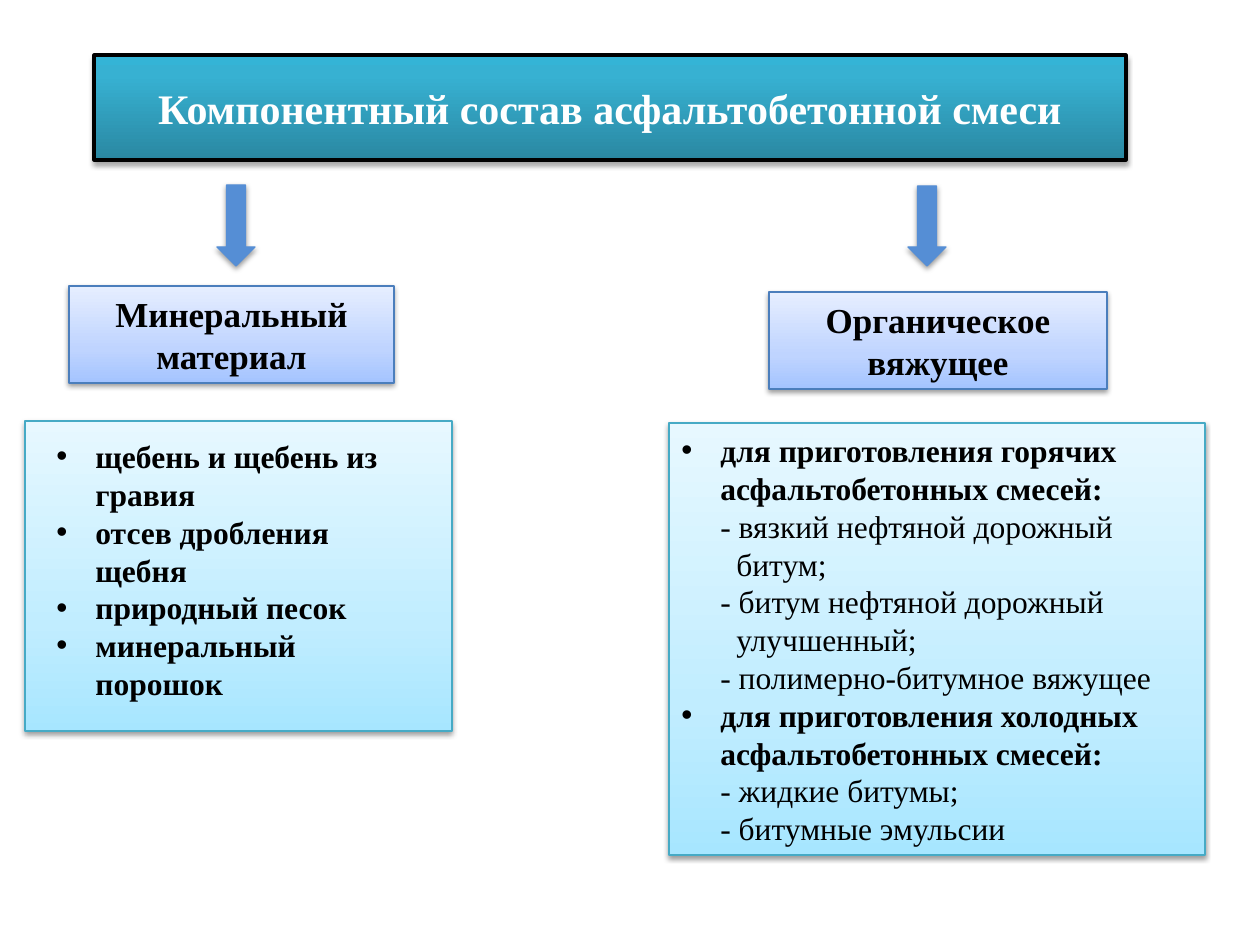
from dataclasses import dataclass

from lxml.etree import SubElement
from pptx import Presentation
from pptx.dml.color import RGBColor
from pptx.enum.shapes import MSO_SHAPE
from pptx.enum.text import MSO_ANCHOR, MSO_AUTO_SIZE, PP_ALIGN
from pptx.oxml.ns import qn
from pptx.util import Emu, Pt

INKS = {
    "black": "000000", "white": "FFFFFF", "arrow": "558ED5",
    "teal": "46AAC5", "blue": "4B7EBC",
}
FADES = {
    "back": ((0, "8488C4"), (53, "D4DEFF"), (83, "D4DEFF"), (100, "96AB94")),
    "title": ((0, "2A88A2"), (80, "37B1D2"), (100, "34B4D6")),
    "head": ((0, "A4C4FF"), (35, "BFD4FF"), (100, "E6EEFF")),
    "panel": ((0, "A7E6FF"), (35, "C1EDFF"), (100, "E7F8FF")),
}
FONT = "Times New Roman"
STEP = 39
HANG = 55


@dataclass
class Area:
    left: int
    top: int
    width: int
    height: int


@dataclass
class Shade:
    alpha: int = 38
    drop: float = 1.6


@dataclass
class Branch:
    arrow: Area
    head: Area
    panel: Area
    name: str


@dataclass
class Item:
    text: str
    bullet: bool = False
    left: int = STEP


TITLE = Area(94, 76, 1032, 63)
BACK = Area(94, 76, 1032, 66)
NOTE = Area(44, 431, 387, 280)
LEFT = Branch(Area(217, 185, 38, 81), Area(69, 286, 325, 97),
              Area(25, 421, 427, 310), "Минеральный материал")
RIGHT = Branch(Area(908, 186, 38, 80), Area(769, 292, 338, 97),
               Area(669, 423, 536, 432), "Органическое вяжущее")
STONES = [Item(text, True) for text in (
    "щебень и щебень из гравия", "отсев дробления щебня",
    "природный песок", "минеральный порошок")]
BINDERS = [
    Item("для приготовления горячих асфальтобетонных смесей:", True),
    Item("- вязкий нефтяной дорожный"),
    Item("битум;", left=HANG),
    Item("- битум нефтяной дорожный"),
    Item("улучшенный;", left=HANG),
    Item("- полимерно-битумное вяжущее"),
    Item("для приготовления холодных асфальтобетонных смесей:", True),
    Item("- жидкие битумы;"),
    Item("- битумные эмульсии"),
]


def px(count: int) -> Emu:
    return Emu(round(count * 914400 / 126))


def ink(name: str) -> RGBColor:
    return RGBColor.from_string(INKS[name])


def place(shape, area: Area) -> None:
    shape.left, shape.top = px(area.left), px(area.top)
    shape.width, shape.height = px(area.width), px(area.height)


def paint(shape, fill: str, line: str, width: float = 0.75,
          shade: Shade | None = None) -> None:
    props = shape._element.spPr
    if fill in FADES:
        shape.fill.gradient()
        shape.fill.gradient_angle = 90
        stops = props.find(qn("a:gradFill")).find(qn("a:gsLst"))
        for stop in list(stops):
            stops.remove(stop)
        for pos, tint in FADES[fill]:
            stop = SubElement(stops, qn("a:gs"), pos=str(pos * 1000))
            SubElement(stop, qn("a:srgbClr"), val=tint)
    else:
        shape.fill.solid()
        shape.fill.fore_color.rgb = ink(fill)
    shape.line.color.rgb = ink(line)
    shape.line.width = Pt(width)
    shape.shadow.inherit = False
    if shade:
        glow = SubElement(
            props.find(qn("a:effectLst")), qn("a:outerShdw"),
            blurRad=str(Pt(3.1)), dist=str(Pt(shade.drop)),
            dir="5400000", rotWithShape="0")
        tint = SubElement(glow, qn("a:srgbClr"), val=INKS["black"])
        SubElement(tint, qn("a:alpha"), val=str(shade.alpha * 1000))


def draw(slide, area: Area, kind=MSO_SHAPE.RECTANGLE):
    shape = slide.shapes.add_shape(kind, 0, 0, 0, 0)
    place(shape, area)
    return shape


def setup(shape, anchor=MSO_ANCHOR.MIDDLE):
    frame = shape.text_frame
    frame.word_wrap = True
    frame.auto_size = MSO_AUTO_SIZE.SHAPE_TO_FIT_TEXT
    frame.vertical_anchor = anchor
    return frame


def write(para, text: str, *, size: int = 18, bold: bool = True,
          color: str = "black", align=PP_ALIGN.LEFT,
          left: int = 0, bullet: bool = False) -> None:
    para.alignment = align
    if left:
        props = para._p.get_or_add_pPr()
        props.set("marL", str(px(left)))
        props.set("indent", str(-px(STEP) if bullet else 0))
        if bullet:
            SubElement(props, qn("a:buFont"), typeface="Arial")
            SubElement(props, qn("a:buChar"), char="•")
        else:
            SubElement(props, qn("a:buNone"))
    run = para.add_run()
    run.text = text
    run.font.name = FONT
    run.font.size = Pt(size)
    run.font.bold = bold
    run.font.color.rgb = ink(color)


def fill_list(frame, items: list[Item]) -> None:
    for rank, item in enumerate(items):
        para = frame.add_paragraph() if rank else frame.paragraphs[0]
        write(para, item.text, bold=item.bullet, left=item.left,
              bullet=item.bullet)


def add_branch(slide, branch: Branch):
    arrow = draw(slide, branch.arrow, MSO_SHAPE.UP_ARROW)
    arrow.rotation = 180
    paint(arrow, "arrow", "arrow", shade=Shade())
    panel = draw(slide, branch.panel)
    paint(panel, "panel", "teal", shade=Shade())
    head = draw(slide, branch.head)
    paint(head, "head", "blue", shade=Shade())
    write(setup(head).paragraphs[0], branch.name, size=20,
          align=PP_ALIGN.CENTER)
    return panel


def main() -> None:
    deck = Presentation()
    deck.slide_width, deck.slide_height = px(1260), px(945)
    slide = deck.slides.add_slide(deck.slide_layouts[5])

    title = slide.shapes.title
    back = draw(slide, BACK)
    paint(back, "back", "black", 2)
    title._element.addprevious(back._element)
    place(title, TITLE)
    paint(title, "title", "black", 1.75, Shade(35, 1.8))
    write(setup(title).paragraphs[0], "Компонентный состав асфальтобетонной смеси",
          size=24, color="white", align=PP_ALIGN.CENTER)

    add_branch(slide, LEFT)
    note = slide.shapes.add_textbox(0, 0, 0, 0)
    place(note, NOTE)
    fill_list(setup(note, MSO_ANCHOR.TOP), STONES)
    fill_list(setup(add_branch(slide, RIGHT)), BINDERS)

    deck.save("out.pptx")


if __name__ == "__main__":
    main()
